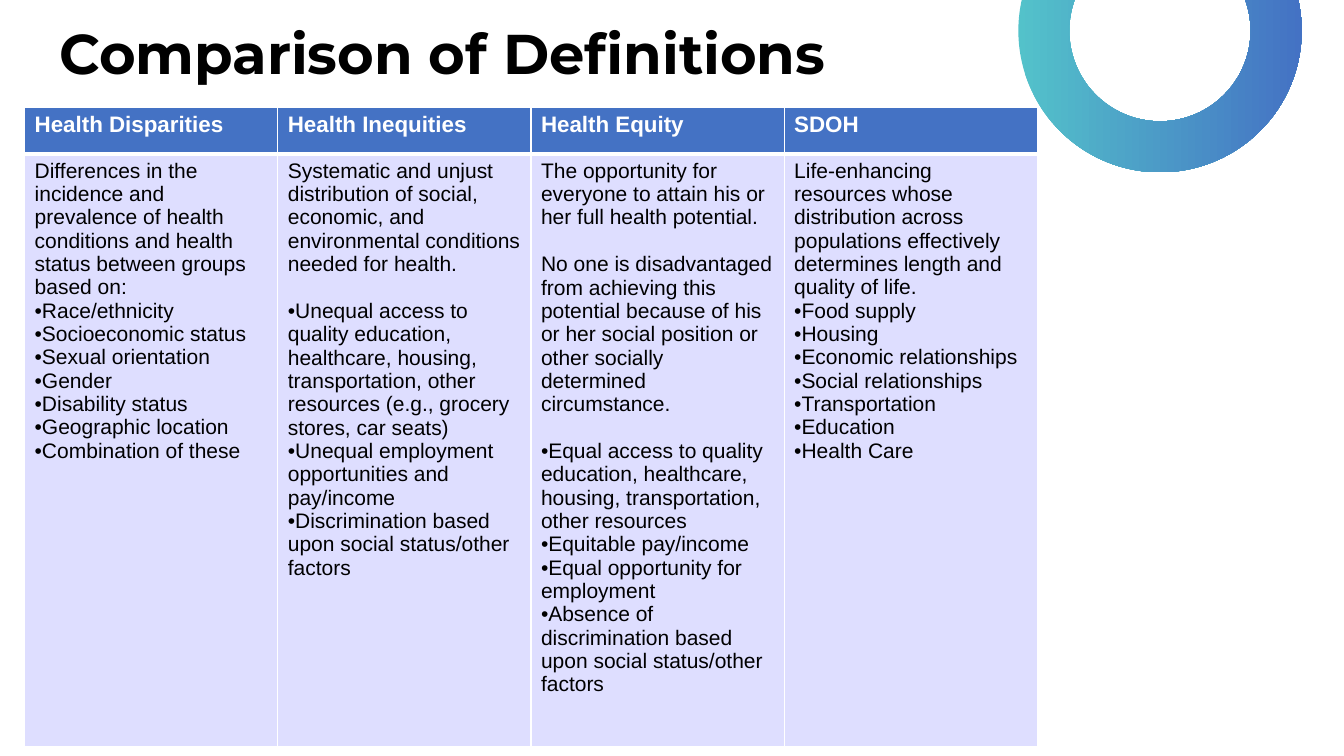
from pptx import Presentation
from pptx.dml.color import RGBColor
from pptx.enum.shapes import MSO_SHAPE
from pptx.enum.text import MSO_ANCHOR
from pptx.oxml.ns import qn
from pptx.util import Inches, Pt
from lxml.etree import SubElement

COLORS = {
    "black": "000000",
    "white": "FFFFFF",
    "blue": "4472C4",
    "teal": "53C2CA",
    "pale": "DEDEFF",
}

TERMS = {
    "Health Disparities": [
        "Differences in the incidence and prevalence of health conditions and health status between groups based on:",
        "•Race/ethnicity",
        "•Socioeconomic status",
        "•Sexual orientation",
        "•Gender",
        "•Disability status",
        "•Geographic location",
        "•Combination of these",
    ],
    "Health Inequities": [
        "Systematic and unjust distribution of social, economic, and environmental conditions needed for health.",
        "|•Unequal access to quality education, healthcare, housing, transportation, other resources (e.g., grocery stores, car seats)",
        "•Unequal employment opportunities and pay/income",
        "•Discrimination based upon social status/other factors",
    ],
    "Health Equity": [
        "The opportunity for everyone to attain his or her full health potential.",
        "|No one is disadvantaged from achieving this potential because of his or her social position or other socially determined circumstance.",
        "|•Equal access to quality education, healthcare, housing, transportation, other resources",
        "•Equitable pay/income",
        "•Equal opportunity for employment",
        "•Absence of discrimination based upon social status/other factors",
    ],
    "SDOH": [
        "Life-enhancing resources whose distribution across populations effectively determines length and quality of life.",
        "•Food supply",
        "•Housing",
        "•Economic relationships",
        "•Social relationships",
        "•Transportation",
        "•Education",
        "•Health Care",
    ],
}


class Deck:
    head = "Montserrat"
    body = "Arial"
    gap = Pt(16.75)

    def __init__(self):
        self.prs = Presentation()
        self.prs.slide_width = Inches(13.33)
        self.prs.slide_height = Inches(7.5)
        self.slide = self.prs.slides.add_slide(self.prs.slide_layouts[6])

    def color(self, name):
        return RGBColor.from_string(COLORS[name])

    def wide(self, share):
        return round(self.prs.slide_width * share / 100)

    def high(self, share):
        return round(self.prs.slide_height * share / 100)

    def place(self, left, top, width, height):
        return self.wide(left), self.high(top), self.wide(width), self.high(height)

    def style(self, para, face, size, color, bold=False):
        font = para.font
        font.name, font.size, font.bold = face, Pt(size), bold
        font.color.rgb = self.color(color)

    def ring(self, box, band, start, end):
        ring = self.slide.shapes.add_shape(MSO_SHAPE.DONUT, *self.place(*box))
        ring.adjustments[0] = band
        ring.shadow.inherit = False
        ring.line.fill.background()
        ring.fill.gradient()
        ring.fill.gradient_angle = 0
        for stop, name, spot in zip(ring.fill.gradient_stops, (start, end), (0, 1)):
            stop.color.rgb = self.color(name)
            stop.position = spot

    def title(self, box, text):
        frame = self.slide.shapes.add_textbox(*self.place(*box)).text_frame
        frame.word_wrap = True
        frame.vertical_anchor = MSO_ANCHOR.MIDDLE
        para = frame.paragraphs[0]
        para.text = text
        para.line_spacing = 0.9
        self.style(para, self.head, 40, "black", True)

    def edges(self, cell, top, bottom):
        props = cell._tc.get_or_add_tcPr()
        for tag, width in (("lnL", 1), ("lnR", 1), ("lnT", top), ("lnB", bottom)):
            line = SubElement(props, qn("a:" + tag), w=str(Pt(width)))
            fill = SubElement(line, qn("a:solidFill"))
            SubElement(fill, qn("a:srgbClr"), val=COLORS["white"])

    def bullet(self, para):
        props = para._p.get_or_add_pPr()
        props.set("marL", "0")
        props.set("indent", "0")
        SubElement(props, qn("a:buFont"), typeface=self.body)
        SubElement(props, qn("a:buChar"), char="•")

    def cell(self, cell, lines, fill, size, color, bold, top, bottom):
        self.edges(cell, top, bottom)
        cell.fill.solid()
        cell.fill.fore_color.rgb = self.color(fill)
        frame = cell.text_frame
        for index, line in enumerate(lines):
            para = frame.add_paragraph() if index else frame.paragraphs[0]
            text = line.lstrip("|")
            para.text = text.lstrip("•")
            if line.startswith("|"):
                para.space_before = self.gap
            if text.startswith("•"):
                self.bullet(para)
            self.style(para, self.body, size, color, bold)

    def table(self, box, top, terms):
        shape = self.slide.shapes.add_table(2, len(terms), *self.place(*box))
        table = shape.table
        table.horz_banding = False
        table.rows[0].height = self.high(top)
        table.rows[1].height = self.high(box[3] - top)
        for index, (term, lines) in enumerate(terms.items()):
            table.columns[index].width = self.wide(box[2] / len(terms))
            self.cell(table.cell(0, index), [term], "blue", 16, "white", True, 1, 3)
            self.cell(table.cell(1, index), lines, "pale", 15, "black", False, 3, 1)

    def save(self):
        self.prs.save("out.pptx")


def main():
    deck = Deck()
    deck.ring((75.77, -14.67, 21.08, 37.47), 0.18, "teal", "blue")
    deck.title((3.68, 2.93, 67.5, 8.93), "Comparison of Definitions")
    deck.table((1.83, 14.2, 75.36, 84.53), 6.2, TERMS)
    deck.save()


if __name__ == "__main__":
    main()
